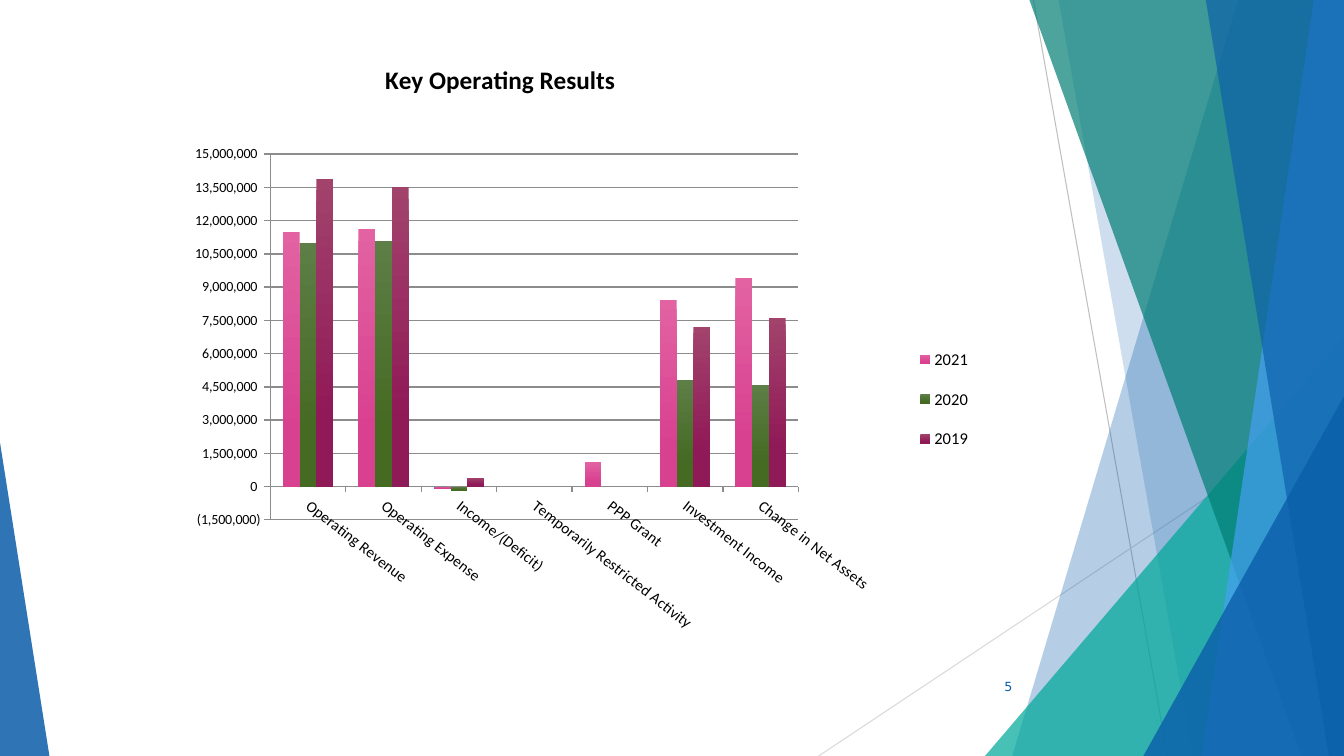
from lxml.etree import SubElement
from pptx import Presentation
from pptx.chart.data import CategoryChartData
from pptx.dml.color import RGBColor
from pptx.enum.chart import XL_CHART_TYPE, XL_LEGEND_POSITION, XL_TICK_MARK
from pptx.enum.shapes import MSO_CONNECTOR, MSO_SHAPE
from pptx.enum.text import MSO_ANCHOR, PP_ALIGN
from pptx.oxml.ns import qn
from pptx.util import Inches, Pt

WIDTH, HEIGHT = 13.33, 7.5
COLORS = {
    "blue": "0B5EAA", "sky": "46A0F3", "teal": "00A89A", "pine": "007E74",
    "grey line": "BFBFBF", "pale line": "D9D9D9", "axis": "8C8C8C", "text": "000000",
}
CATEGORIES = ["Operating Revenue", "Operating Expense", "Income/(Deficit)",
              "Temporarily Restricted Activity", "PPP Grant",
              "Investment Income", "Change in Net Assets"]
# year: (top colour, bottom colour, values in millions)
YEARS = {
    "2021": ("E262A2", "D84190", [11.5, 11.6, -0.1, 0, 1.1, 8.4, 9.4]),
    "2020": ("5D7E46", "456A22", [11, 11.1, -0.2, 0, 0, 4.8, 4.6]),
    "2019": ("A2436C", "901957", [13.9, 13.5, 0.4, 0, 0, 7.2, 7.6]),
}
MILLION = 1_000_000


def rgb(name):
    return RGBColor.from_string(COLORS[name])


def style_font(font, size, color="text", bold=False, face="Calibri"):
    font.name, font.size, font.bold = face, Pt(size), bold
    font.color.rgb = rgb(color)


def add_text(slide, text, box, size, color, face, align):
    frame = slide.shapes.add_textbox(*map(Inches, box)).text_frame
    frame.word_wrap = True
    frame.vertical_anchor = MSO_ANCHOR.MIDDLE
    paragraph = frame.paragraphs[0]
    paragraph.alignment = align
    run = paragraph.add_run()
    run.text = text
    style_font(run.font, size, color, face=face)


def paint(facet, color, opacity):
    """Fill without outline or shadow; opacity is in percent."""
    facet.shadow.inherit = False
    facet.line.fill.background()
    facet.fill.solid()
    facet.fill.fore_color.rgb = rgb(color)
    tint = facet.fill._xPr.find(qn("a:solidFill"))[0]
    SubElement(tint, qn("a:alpha"), val=str(opacity * 1000))


def add_ray(slide, start, end, color):
    ray = slide.shapes.add_connector(MSO_CONNECTOR.STRAIGHT, *map(Inches, start + end))
    ray.line.color.rgb = rgb(color)
    ray.line.width = Pt(0.75)
    SubElement(ray._element.spPr, qn("a:effectLst"))


def add_band(slide, top, bottom, color, opacity):
    """Full-height band from a slanted left edge to the slide's right side."""
    outline = slide.shapes.build_freeform(Inches(top), 0)
    corners = [(WIDTH, 0), (WIDTH, HEIGHT), (bottom, HEIGHT)]
    outline.add_line_segments([(Inches(x), Inches(y)) for x, y in corners])
    paint(outline.convert_to_shape(), color, opacity)


def add_corner(slide, left, top, width, apex, color, opacity):
    """Triangle standing on the slide's bottom edge."""
    corner = slide.shapes.add_shape(
        MSO_SHAPE.ISOSCELES_TRIANGLE, *map(Inches, (left, top, width, HEIGHT - top)))
    corner.adjustments[0] = apex
    paint(corner, color, opacity)


def add_facets(slide):
    add_ray(slide, (10.25, 0), (11.58, HEIGHT), "grey line")
    add_ray(slide, (WIDTH, 4.03), (8.12, HEIGHT), "pale line")
    add_band(slide, 12.28, 10.04, "blue", 30)
    add_band(slide, 10.5, 11.83, "blue", 20)
    add_corner(slide, 9.77, 3.33, WIDTH - 9.77, 1, "teal", 72)
    add_band(slide, 10.21, 12.91, "pine", 70)
    add_band(slide, 13.03, 11.92, "sky", 70)
    add_band(slide, 11.96, 13.18, "blue", 65)
    add_corner(slide, 11.34, 3.93, WIDTH - 11.34, 1, "blue", 80)
    add_corner(slide, 0, 4.39, 0.49, 0, "blue", 85)


def place(part, after=None, inner=False, **shares):
    """Set a chart part's manual layout, in shares of the chart."""
    old = part.find(qn("c:layout"))
    if old is not None:
        part.remove(old)
    layout = SubElement(part, qn("c:layout"))
    part.insert(0 if after is None else part.index(part.find(qn(after))) + 1, layout)
    manual = SubElement(layout, qn("c:manualLayout"))
    if inner:
        SubElement(manual, qn("c:layoutTarget"), val="inner")
    for side in "xy":
        SubElement(manual, qn(f"c:{side}Mode"), val="edge")
    for side, share in shares.items():
        SubElement(manual, qn(f"c:{side}"), val=str(share))


def style_axis(axis, size, number_format):
    style_font(axis.tick_labels.font, size)
    axis.tick_labels.number_format = number_format
    axis.tick_labels.number_format_is_linked = False
    axis.major_tick_mark = XL_TICK_MARK.OUTSIDE
    axis.minor_tick_mark = XL_TICK_MARK.NONE
    style_line(axis.format.line)


def style_line(line):
    line.color.rgb = rgb("axis")
    line.width = Pt(1)


def add_results_chart(slide, box):
    results = CategoryChartData()
    results.categories = CATEGORIES
    for year, (_, _, millions) in YEARS.items():
        results.add_series(year, [round(value * MILLION) for value in millions])
    chart = slide.shapes.add_chart(
        XL_CHART_TYPE.COLUMN_CLUSTERED, *map(Inches, box), results).chart
    style_font(chart.font, 10)

    chart.has_title = True
    heading = chart.chart_title.text_frame
    heading.text = "Key Operating Results"
    style_font(heading.paragraphs[0].runs[0].font, 18, bold=True)
    place(chart.chart_title._element, "c:tx", x=0.32, y=0.04)

    chart.has_legend = True
    legend = chart.legend
    legend.position = XL_LEGEND_POSITION.RIGHT
    legend.include_in_layout = False
    style_font(legend.font, 11.8)
    place(legend._element, "c:legendPos", x=0.9, y=0.43, w=0.09, h=0.2)

    style_axis(chart.category_axis, 11, "@")
    labels = chart.category_axis._element.find(qn("c:txPr")).find(qn("a:bodyPr"))
    labels.set("rot", str(38 * 60000))
    labels.set("vert", "horz")

    amounts = chart.value_axis
    style_axis(amounts, 10, "#,##0_);(#,##0)")
    amounts.major_unit = 1.5 * MILLION
    amounts.minimum_scale, amounts.maximum_scale = -1.5 * MILLION, 15 * MILLION
    style_line(amounts.major_gridlines.format.line)

    plot = chart.plots[0]
    plot.gap_width, plot.overlap = 150, 0
    plot.vary_by_categories = False
    for bars, (light, dark, _) in zip(plot.series, YEARS.values()):
        bars.invert_if_negative = False
        fill = bars.format.fill
        fill.gradient()
        fill.gradient_angle = 270
        for stop, position, shade in zip(fill.gradient_stops, (0, 0.78), (light, dark)):
            stop.position = position
            stop.color.rgb = RGBColor.from_string(shade)
    place(chart._chartSpace.chart.plotArea, inner=True, x=0.198, y=0.178, w=0.585, h=0.525)


def main():
    deck = Presentation()
    deck.slide_width, deck.slide_height = Inches(WIDTH), Inches(HEIGHT)
    slide = deck.slides.add_slide(deck.slide_layouts.get_by_name("Blank"))
    add_facets(slide)
    add_text(slide, "5", (9.39, 6.61, 0.75, 0.4), size=9, color="blue",
             face="DejaVu Sans", align=PP_ALIGN.RIGHT)
    add_results_chart(slide, (0.91, 0.3, 8.95, 6.91))
    deck.save("out.pptx")


if __name__ == "__main__":
    main()
